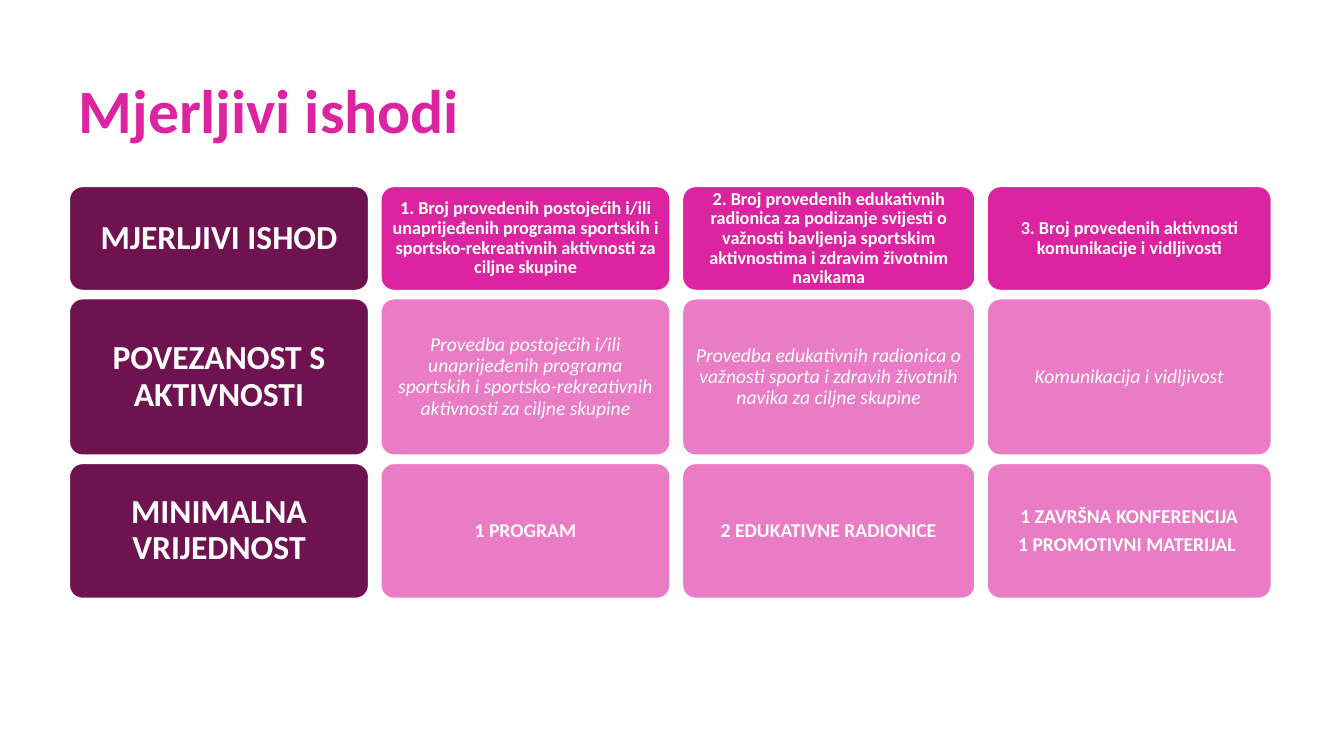
"""Build the slide of measurable outcomes as a grid of rounded cards."""
from dataclasses import dataclass

from pptx import Presentation
from pptx.dml.color import RGBColor
from pptx.enum.shapes import MSO_SHAPE
from pptx.enum.text import MSO_ANCHOR, PP_ALIGN
from pptx.slide import Slide
from pptx.text.text import TextFrame
from pptx.util import Cm, Pt

ROUND = MSO_SHAPE.ROUNDED_RECTANGLE
MIDDLE = MSO_ANCHOR.MIDDLE
LEFT = PP_ALIGN.LEFT
CENTER = PP_ALIGN.CENTER
FONT = "Calibri"
COLORS = {"plum": "6E1250", "pink": "DC24A0", "rose": "EA7CC6", "white": "FFFFFF"}

START, TOP = 1.75, 4.7
WIDTHS = [7.54, 7.29, 7.37, 7.16]
HEIGHTS = [2.62, 3.94, 3.4]
GAP_X, GAP_Y = 0.31, 0.21
RADIUS = 0.33


@dataclass
class Style:
    """Look of a piece of text and the card behind it."""
    size: float
    color: str = "white"
    fill: str = "rose"
    bold: bool = True
    italic: bool = False
    inset: float = 0.13
    align: PP_ALIGN = CENTER
    after: float = 0.35


TITLE = Style(44, color="pink", align=LEFT, after=0)
LABEL = Style(24, fill="plum", inset=0.26)
HEAD = Style(13, fill="pink")
LINK = Style(14, bold=False, italic=True)
VALUE = Style(14)


@dataclass
class Row:
    """One row of the grid: its label, its cards and their style."""
    label: str
    style: Style
    cards: list[list[str]]


ROWS = [
    Row("MJERLJIVI ISHOD", HEAD, [
        ["1. Broj provedenih postojećih i/ili unaprijeđenih programa sportskih i "
         "sportsko-rekreativnih aktivnosti za ciljne skupine"],
        ["2. Broj provedenih edukativnih radionica za podizanje svijesti o važnosti "
         "bavljenja sportskim aktivnostima i zdravim životnim navikama"],
        ["3. Broj provedenih aktivnosti komunikacije i vidljivosti"],
    ]),
    Row("POVEZANOST S AKTIVNOSTI", LINK, [
        ["Provedba postojećih i/ili unaprijeđenih programa sportskih i "
         "sportsko-rekreativnih aktivnosti za ciljne skupine"],
        ["Provedba edukativnih radionica o važnosti sporta i zdravih životnih "
         "navika za ciljne skupine"],
        ["Komunikacija i vidljivost"],
    ]),
    Row("MINIMALNA VRIJEDNOST", VALUE, [
        ["1 PROGRAM"],
        ["2 EDUKATIVNE RADIONICE"],
        ["1 ZAVRŠNA KONFERENCIJA", "1 PROMOTIVNI MATERIJAL "],
    ]),
]


def tint(name: str) -> RGBColor:
    """Return a named colour."""
    return RGBColor.from_string(COLORS[name])


def write(frame: TextFrame, lines: list[str], style: Style) -> None:
    """Fill a text frame with one paragraph per line."""
    frame.word_wrap = True
    frame.vertical_anchor = MIDDLE
    for i, line in enumerate(lines):
        para = frame.add_paragraph() if i else frame.paragraphs[0]
        para.alignment = style.align
        para.line_spacing = 0.9
        para.space_after = Pt(style.size * style.after)
        run = para.add_run()
        run.text = line
        font = run.font
        font.name, font.size = FONT, Pt(style.size)
        font.bold, font.italic = style.bold, style.italic
        font.color.rgb = tint(style.color)


def draw(slide: Slide, x: float, y: float, w: float, h: float,
         lines: list[str], style: Style) -> None:
    """Draw one rounded card with its text."""
    card = slide.shapes.add_shape(ROUND, Cm(x), Cm(y), Cm(w), Cm(h))
    card.adjustments[0] = RADIUS / min(w, h)
    card.shadow.inherit = False
    card.fill.solid()
    card.fill.fore_color.rgb = tint(style.fill)
    card.line.color.rgb = tint("white")
    card.line.width = Pt(1)
    frame = card.text_frame
    frame.margin_left = frame.margin_right = Cm(style.inset)
    frame.margin_top = frame.margin_bottom = Cm(style.inset)
    write(frame, lines, style)


def main() -> None:
    """Build and save the slide."""
    deck = Presentation()
    deck.slide_width, deck.slide_height = Cm(33.87), Cm(19.05)
    slide = deck.slides.add_slide(deck.slide_layouts[6])
    title = slide.shapes.add_textbox(Cm(1.73), Cm(1.02), Cm(26.85), Cm(3.68))
    write(title.text_frame, ["Mjerljivi ishodi"], TITLE)
    y = TOP
    for row, h in zip(ROWS, HEIGHTS):
        x = START
        for i, (w, lines) in enumerate(zip(WIDTHS, [[row.label], *row.cards])):
            draw(slide, x, y, w, h, lines, row.style if i else LABEL)
            x += w + GAP_X
        y += h + GAP_Y
    deck.save("out.pptx")


if __name__ == "__main__":
    main()
